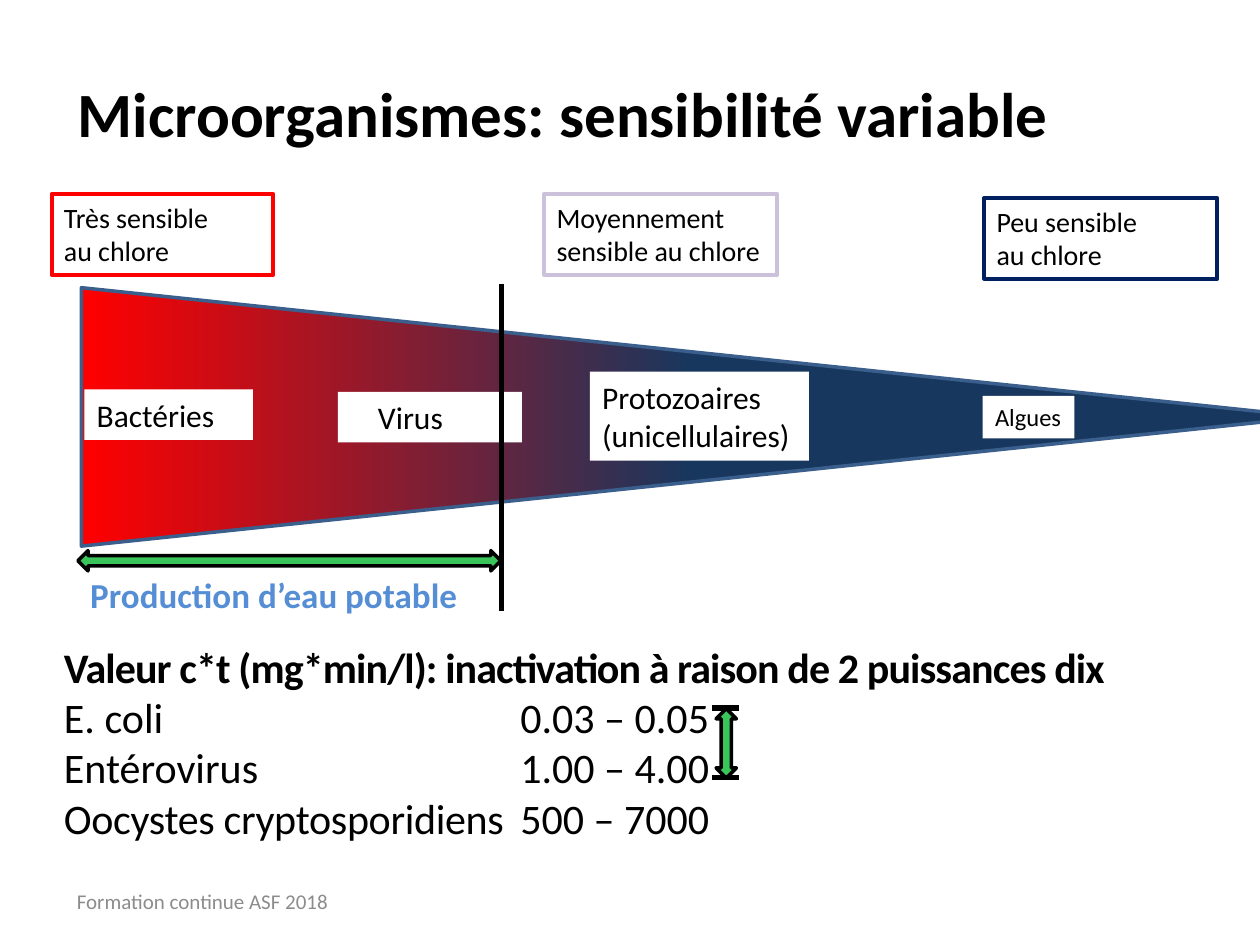
from lxml import etree
from pptx import Presentation
from pptx.dml.color import RGBColor
from pptx.enum.shapes import MSO_CONNECTOR, MSO_SHAPE
from pptx.enum.text import MSO_ANCHOR
from pptx.oxml.ns import qn
from pptx.util import Cm, Pt

RECT = MSO_SHAPE.RECTANGLE
WEDGE = MSO_SHAPE.ISOSCELES_TRIANGLE
ARROW = MSO_SHAPE.LEFT_RIGHT_ARROW
LINE = MSO_CONNECTOR.STRAIGHT
TOP, MID = MSO_ANCHOR.TOP, MSO_ANCHOR.MIDDLE

BLACK = RGBColor(0x00, 0x00, 0x00)
WHITE = RGBColor(0xFF, 0xFF, 0xFF)
GREY = RGBColor(0x8C, 0x8C, 0x8C)
RED = RGBColor(0xFF, 0x00, 0x00)
LILAC = RGBColor(0xCC, 0xC1, 0xDA)
NAVY = RGBColor(0x00, 0x20, 0x60)
DEEP = RGBColor(0x17, 0x37, 0x5E)
EDGE = RGBColor(0x3A, 0x5F, 0x8C)
SKY = RGBColor(0x55, 0x8E, 0xD5)
GREEN = RGBColor(0x39, 0xC5, 0x5A)

LEVELS = [
    ("Très sensible\nau chlore", (1.04, 3.91, 4.47, 1.63), RED),
    ("Moyennement sensible au chlore", (10.97, 3.91, 4.7, 1.63), LILAC),
    ("Peu sensible\nau chlore", (19.84, 3.99, 4.7, 1.63), NAVY),
]
GERMS = [
    ("Bactéries", (1.7, 7.85, 3.4, 1.02), 18, 0),
    ("Protozoaires (unicellulaires)", (11.89, 7.49, 4.42, 1.8), 18, 0),
    ("Virus", (6.81, 7.9, 3.71, 1.02), 18, 0.56),
    ("Algues", (19.81, 7.98, 1.85, 0.86), 14, 0),
]
DOSES = [
    ("E. coli", "0.03 – 0.05", 0),
    ("Entérovirus", "1.00 – 4.00", 0),
    ("Oocystes cryptosporidiens", "500 – 7000", -20),
]


def add_run(para, text, size, color=BLACK, bold=False, space=0):
    """Append a formatted run to a paragraph."""
    run = para.add_run()
    run.text = text
    font = run.font
    font.name, font.size, font.bold = "Calibri", Pt(size), bold
    font.color.rgb = color
    if space:
        run._r.get_or_add_rPr().set("spc", str(space))


def put_text(frame, text, size, anchor=TOP, wrap=True, indent=0, **style):
    """Fill a text frame with one left-aligned paragraph per line."""
    frame.word_wrap = wrap
    frame.vertical_anchor = anchor
    for i, line in enumerate(text.split("\n")):
        para = frame.paragraphs[0] if i == 0 else frame.add_paragraph()
        props = para._p.get_or_add_pPr()
        props.set("algn", "l")
        if indent:
            props.set("marL", str(Cm(indent)))
        add_run(para, line, size, **style)


def add_label(slide, box, text, size, **style):
    """Add a text box and return its frame."""
    frame = slide.shapes.add_textbox(*map(Cm, box)).text_frame
    put_text(frame, text, size, **style)
    return frame


def add_form(slide, kind, box, fill=None, line=None, width=2, turn=0):
    """Add a preset shape with optional fill, outline and rotation."""
    form = slide.shapes.add_shape(kind, *map(Cm, box))
    form.shadow.inherit = False
    form.rotation = turn
    if fill is None:
        form.fill.background()
    else:
        form.fill.solid()
        form.fill.fore_color.rgb = fill
    if line is None:
        form.line.fill.background()
    else:
        form.line.color.rgb = line
        form.line.width = Pt(width)
    return form


def add_wedge(slide):
    """Add the wedge that fades from red to navy."""
    wedge = add_form(slide, WEDGE, (11.43, -3.99, 5.21, 24.79), line=EDGE, turn=90)
    wedge.fill.gradient()
    wedge.fill.gradient_angle = 270
    for stop, place, color in zip(wedge.fill.gradient_stops, (0.5, 1), (DEEP, RED)):
        stop.position = place
        stop.color.rgb = color


def add_line(slide, *ends):
    """Add a straight black line between two points."""
    line = slide.shapes.add_connector(LINE, *map(Cm, ends))
    line.line.color.rgb = BLACK
    line.line.width = Pt(3)
    etree.SubElement(line._element.spPr, qn("a:effectLst"))


def add_doses(slide):
    """Add the dose heading and its tabbed rows."""
    head = "Valeur c*t (mg*min/l): inactivation à raison de 2 puissances dix"
    frame = add_label(slide, (1.04, 12.8, 24.36, 4.37), head, 24, bold=True, space=-50)
    for name, dose, space in DOSES:
        para = frame.add_paragraph()
        tabs = etree.SubElement(para._p.get_or_add_pPr(), qn("a:tabLst"))
        etree.SubElement(tabs, qn("a:tab"), pos=str(Cm(9.2)), algn="l")
        add_run(para, name, 24, space=space)
        add_run(para, "\t" + dose, 24)


def main():
    """Build the slide and save it."""
    deck = Presentation()
    deck.slide_width, deck.slide_height = Cm(25.4), Cm(19.05)
    slide = deck.slides.add_slide(deck.slide_layouts[6])

    add_label(slide, (1.32, 0.91, 21.59, 2.72), "Microorganismes: sensibilité variable",
              36, anchor=MID, bold=True)
    add_label(slide, (1.3, 17.65, 9.02, 1.02), "Formation continue ASF 2018",
              12, anchor=MID, color=GREY)
    add_label(slide, (1.57, 11.43, 7.98, 1.12), "Production d’eau potable",
              20, wrap=False, color=SKY, bold=True)
    add_doses(slide)

    add_wedge(slide)
    for text, box, color in LEVELS:
        form = add_form(slide, RECT, box, line=color, width=2.25)
        put_text(form.text_frame, text, 16)
    for text, box, size, indent in GERMS:
        form = add_form(slide, RECT, box, fill=WHITE)
        put_text(form.text_frame, text, size, indent=indent)

    add_line(slide, 10.11, 5.72, 10.11, 12.32)
    add_form(slide, ARROW, (1.57, 11.1, 8.53, 0.41), GREEN, BLACK)
    add_form(slide, ARROW, (13.94, 14.78, 1.4, 0.41), GREEN, BLACK, turn=90)
    for y in (14.27, 15.67):
        add_line(slide, 14.9, y, 14.36, y)

    deck.save("out.pptx")


if __name__ == "__main__":
    main()
